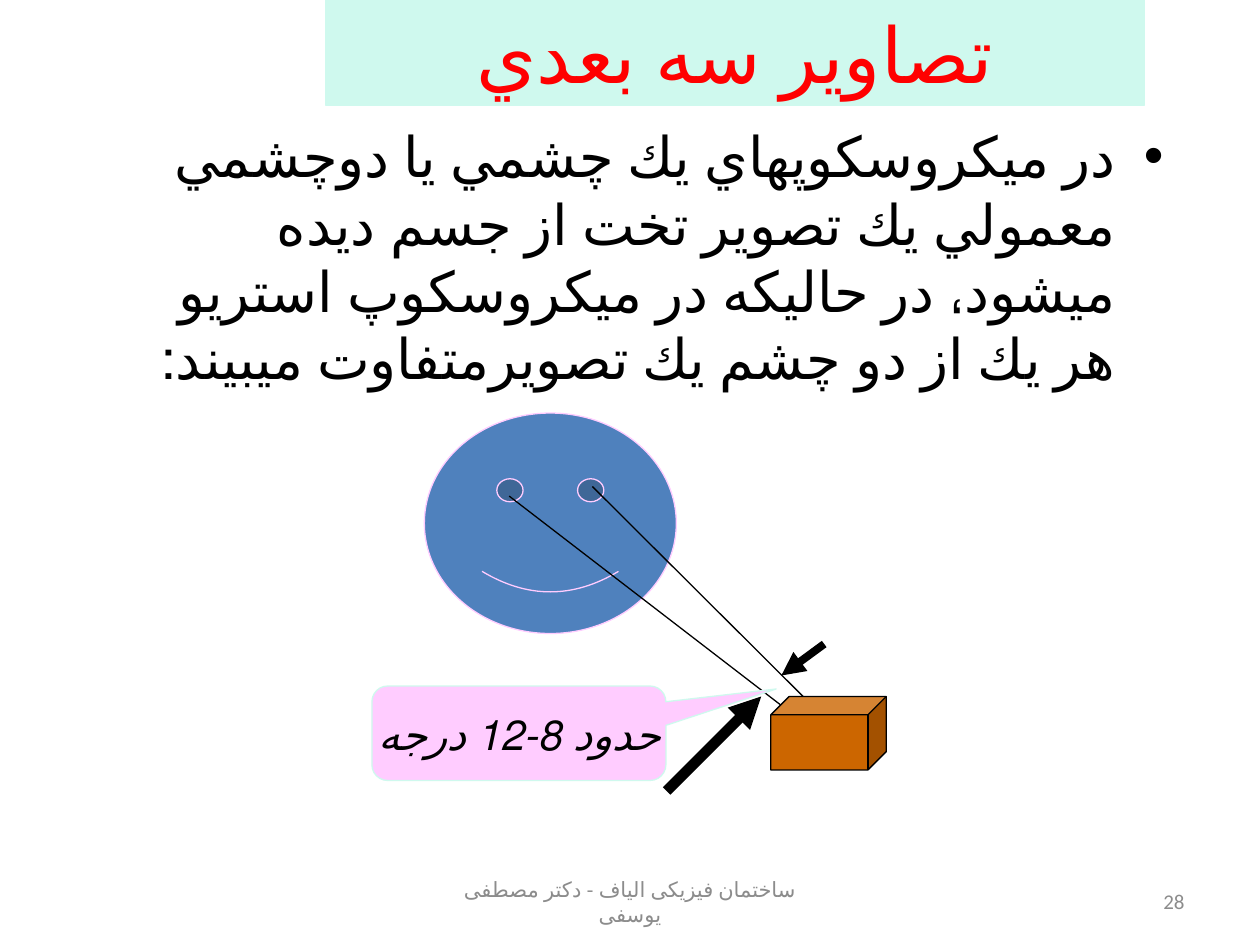
import pptx
import pptx.dml.color
import pptx.enum.lang
import pptx.enum.shapes
import pptx.enum.text
import pptx.util
from pptx.oxml.ns import qn
from lxml import etree

Pt = pptx.util.Pt
KIND = pptx.enum.shapes.MSO_SHAPE
ALIGN = pptx.enum.text.PP_ALIGN
MIDDLE = pptx.enum.text.MSO_ANCHOR.MIDDLE
FARSI = pptx.enum.lang.MSO_LANGUAGE_ID.FARSI
COLORS = {"mint": "CFF9EE", "red": "FF0000", "black": "000000", "face": "4F81BD",
          "pink": "FFCCFF", "box": "CC6600", "grey": "8C8C8C"}


def color(name):
    return pptx.dml.color.RGBColor.from_string(COLORS[name])


def place(shape, left, top, width, height):
    shape.left, shape.top = Pt(left), Pt(top)
    shape.width, shape.height = Pt(width), Pt(height)


def paint(shape, fill, line):
    shape.fill.solid()
    shape.fill.fore_color.rgb = color(fill)
    shape.line.color.rgb = color(line)
    shape.line.width = Pt(0.75)


def write(shape, text, size, ink, align, font="Calibri", rtl=True):
    para = shape.text_frame.paragraphs[0]
    para.text = text
    para.alignment = align
    para.font.size = Pt(size)
    para.font.name = font
    para.font.color.rgb = color(ink)
    para.runs[0].font.language_id = FARSI
    if rtl:
        para._p.get_or_add_pPr().set("rtl", "1")
    return para


def add_form(group, kind, box, fill, line, *adjust):
    shape = group.shapes.add_shape(kind, *map(Pt, box))
    shape.shadow.inherit = False
    paint(shape, fill, line)
    for i, value in enumerate(adjust):
        shape.adjustments[i] = value
    return shape


def add_arrow(group, ends, width):
    arrow = group.shapes.add_connector(pptx.enum.shapes.MSO_CONNECTOR.STRAIGHT, *map(Pt, ends))
    arrow.line.color.rgb = color("black")
    arrow.line.width = Pt(width)
    etree.SubElement(arrow.line._get_or_add_ln(), qn("a:tailEnd"), type="triangle")
    etree.SubElement(arrow._element.spPr, qn("a:effectLst"))


def add_note(slide, box, text, align):
    """Add a grey text of the footer row."""
    note = slide.shapes.add_textbox(*map(Pt, box))
    note.text_frame.word_wrap = True
    note.text_frame.vertical_anchor = MIDDLE
    write(note, text, 12, "grey", align, rtl=False)


def add_scene(slide):
    """Draw the face looking at the box, with the angle between both eyes."""
    scene = slide.shapes.add_group_shape()
    add_form(scene, KIND.SMILEY_FACE, (242.5, 236, 144, 126), "face", "pink", 0.047)
    add_arrow(scene, (291, 283.5, 471, 422), 0.75)
    add_arrow(scene, (338.5, 278, 471, 410), 0.75)
    add_arrow(scene, (381, 452, 435, 398), 6)
    label = add_form(scene, KIND.ROUNDED_RECTANGULAR_CALLOUT, (212.5, 392, 168, 54),
                     "pink", "mint", 0.875, -0.468, 0.167)
    label.text_frame.word_wrap = False
    label.text_frame.vertical_anchor = MIDDLE
    para = write(label, "حدود 8-12 درجه", 24, "black", ALIGN.CENTER, "Times New Roman")
    para.font.italic = True
    add_arrow(scene, (471, 368, 446.5, 386), 4.5)
    add_form(scene, KIND.CUBE, (440.5, 398, 66, 42), "box", "black", 0.25)


def main():
    deck = pptx.Presentation()
    deck.slide_width, deck.slide_height = Pt(720), Pt(540)
    slide = deck.slides.add_slide(deck.slide_layouts[1])

    title = slide.shapes.title
    place(title, 186, 0, 468, 60)
    paint(title, "mint", "mint")
    title.text_frame.vertical_anchor = MIDDLE
    write(title, "تصاوير سه بعدي", 44, "red", ALIGN.CENTER)

    body = slide.placeholders[1]
    place(body, 60, 66, 612, 474)
    write(body, "در ميكروسكوپهاي يك چشمي يا دوچشمي معمولي يك تصوير تخت از جسم ديده "
                "ميشود، در حاليكه در ميكروسكوپ استريو هر يك از دو چشم يك "
                "تصويرمتفاوت ميبيند:", 32, "black", ALIGN.RIGHT)

    add_scene(slide)
    add_note(slide, (516, 500.5, 168, 29), "28", ALIGN.RIGHT)
    add_note(slide, (246, 500.5, 228, 29), "ساختمان فیزیکی الیاف - دکتر مصطفی یوسفی",
             ALIGN.CENTER)
    deck.save("out.pptx")


if __name__ == "__main__":
    main()
